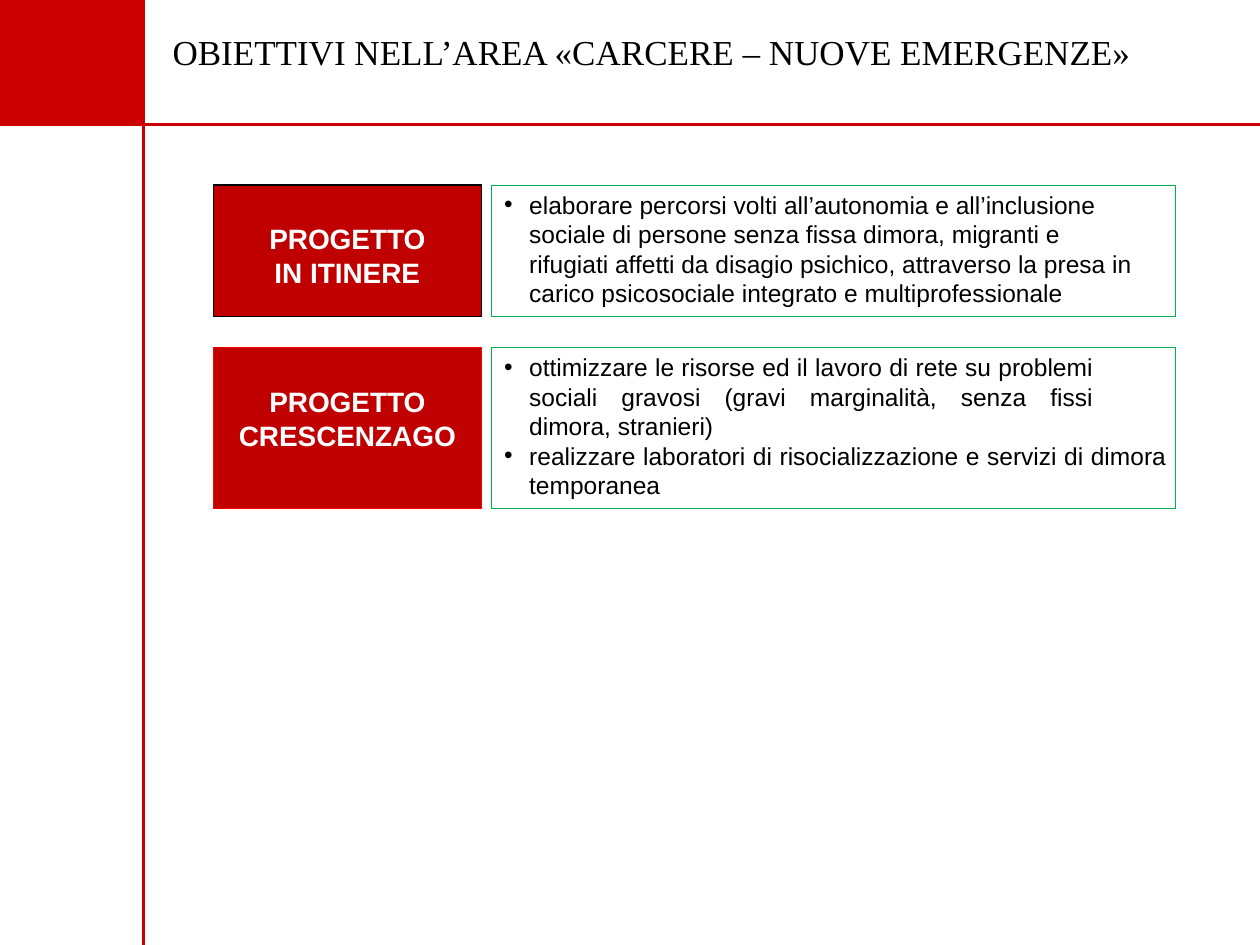
import pptx
import pptx.util
import pptx.dml.color
import pptx.enum.shapes
import pptx.enum.text
import pptx.oxml
from pptx.oxml.ns import qn

Pt = pptx.util.Pt
ALIGN = pptx.enum.text.PP_ALIGN
RECT = pptx.enum.shapes.MSO_SHAPE.RECTANGLE

# Content
TITLE = "OBIETTIVI NELL’AREA «CARCERE – NUOVE EMERGENZE»"
# Goals are (text, right margin, alignment)
PROJECTS = [
    {"name": "PROGETTO IN ITINERE", "side": 28, "line": "000000",
     "top": 105.8, "height": 75,
     "goals": [("elaborare percorsi volti all’autonomia e all’inclusione sociale di persone "
                "senza fissa dimora, migranti e rifugiati affetti da disagio psichico, "
                "attraverso la presa in carico psicosociale integrato e multiprofessionale",
                22, ALIGN.LEFT)]},
    {"name": "PROGETTO CRESCENZAGO", "side": 14, "line": "FF0000",
     "top": 198.7, "height": 92,
     "goals": [("ottimizzare le risorse ed il lavoro di rete su problemi sociali gravosi "
                "(gravi marginalità, senza fissi dimora, stranieri)", 47, ALIGN.JUSTIFY),
               ("realizzare laboratori di risocializzazione e servizi di dimora temporanea",
                5, ALIGN.JUSTIFY)]},
]

# Layout
WIDTH, HEIGHT = 720, 540
BAND_W, BAND_H = 82, 71.3
NAME_X, NAME_W = 122, 153
GOALS_X, GOALS_W = 280.8, 391
RED, DARK_RED, GREEN = "CC0000", "C00000", "00AF50"


def rgb(color):
    return pptx.dml.color.RGBColor.from_string(color)


def place(sp, x, y, w, h):
    sp.left, sp.top, sp.width, sp.height = Pt(x), Pt(y), Pt(w), Pt(h)


def frame(sp, left=0, top=0, right=0):
    tf = sp.text_frame
    tf.word_wrap = True
    tf.auto_size = pptx.enum.text.MSO_AUTO_SIZE.NONE
    tf.vertical_anchor = pptx.enum.text.MSO_ANCHOR.TOP
    tf.margin_left, tf.margin_top, tf.margin_right, tf.margin_bottom = (
        Pt(left), Pt(top), Pt(right), 0)
    return tf


def style(p, size, font, color, align, bold=False):
    p.alignment = align
    p.space_before = 0
    p.line_spacing = 1.0
    for r in p.runs:
        r.font.size, r.font.name, r.font.bold = Pt(size), font, bold
        r.font.color.rgb = rgb(color)


def add_rect(s, x, y, w, h, fill, line=None):
    sp = s.shapes.add_shape(RECT, Pt(x), Pt(y), Pt(w), Pt(h))
    sp.shadow.inherit = False
    sp.fill.solid()
    sp.fill.fore_color.rgb = rgb(fill)
    if line:
        sp.line.color.rgb = rgb(line)
        sp.line.width = Pt(0.72)
    else:
        sp.line.fill.background()
    return sp


def add_rule(s, x1, y1, x2, y2):
    rule = s.shapes.add_connector(pptx.enum.shapes.MSO_CONNECTOR.STRAIGHT,
                                  Pt(x1), Pt(y1), Pt(x2), Pt(y2))
    rule.line.color.rgb = rgb(RED)
    rule.line.width = Pt(1.5)
    rule._element.spPr.append(pptx.oxml.parse_xml(
        '<a:effectLst xmlns:a="http://schemas.openxmlformats.org/drawingml/2006/main"/>'))


def add_bullet(p, right):
    pPr = p._p.get_or_add_pPr()
    pPr.set("marL", str(Pt(21.6)))
    pPr.set("marR", str(Pt(right)))
    pPr.set("indent", str(-Pt(14.4)))
    pPr.append(pPr.makeelement(qn("a:buChar"), {"char": "•"}))


def main():
    prs = pptx.Presentation()
    prs.slide_width, prs.slide_height = Pt(WIDTH), Pt(HEIGHT)
    s = prs.slides.add_slide(prs.slide_layouts[3])  # Two Content
    title, *bodies = s.placeholders

    # Plain red corner and rules
    add_rect(s, 0, 0, BAND_W, BAND_H, RED)
    add_rule(s, 0, BAND_H, WIDTH, BAND_H)
    add_rule(s, BAND_W, HEIGHT, BAND_W, 0)

    # Title
    place(title, 93.6, 9.4, 612, 32.4)
    tf = frame(title, 5, 8)
    tf.text = TITLE
    style(tf.paragraphs[0], 20, "Times New Roman", "000000", ALIGN.LEFT)

    # Projects: name on the left, goals on the right
    for project, body in zip(PROJECTS, bodies):
        top, height = project["top"], project["height"]
        name = add_rect(s, NAME_X, top, NAME_W, height, DARK_RED, project["line"])
        tf = frame(name, project["side"], 21, project["side"])
        tf.text = project["name"]
        style(tf.paragraphs[0], 16, "Arial", "FFFFFF", ALIGN.CENTER, bold=True)

        place(body, GOALS_X, top, GOALS_W, height)
        body.line.color.rgb = rgb(GREEN)
        body.line.width = Pt(0.72)
        tf = frame(body, top=2.6)
        tf.text = "\n".join(text for text, _, _ in project["goals"])
        for p, (_, right, align) in zip(tf.paragraphs, project["goals"]):
            add_bullet(p, right)
            style(p, 14, "Arial", "000000", align)

    prs.save("out.pptx")


if __name__ == "__main__":
    main()
